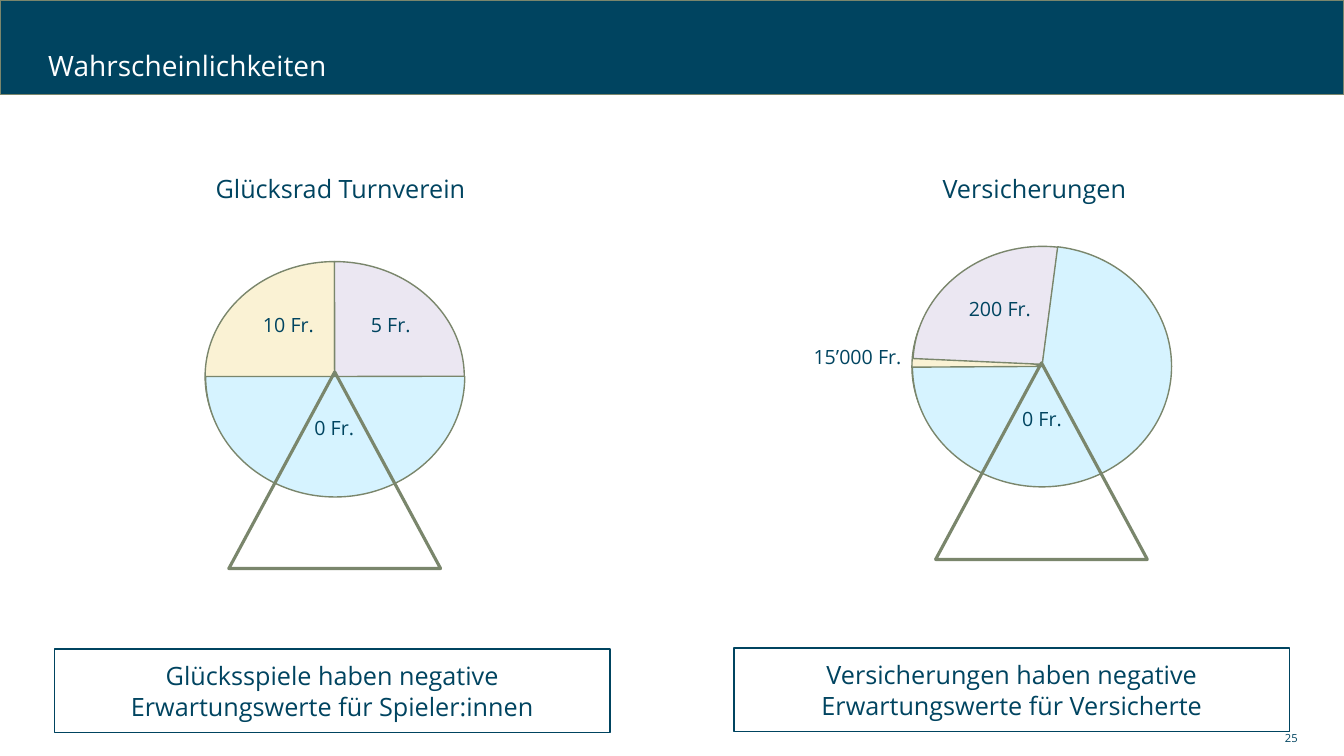
from pptx import Presentation
from pptx.dml.color import RGBColor
from pptx.enum.shapes import MSO_SHAPE as SHAPE
from pptx.enum.text import MSO_ANCHOR as ANCHOR, MSO_AUTO_SIZE as AUTO_SIZE, PP_ALIGN as ALIGN
from pptx.oxml.ns import qn
from pptx.util import Inches, Pt

NAVY = RGBColor(0x00, 0x44, 0x60)
OLIVE = RGBColor(0x7A, 0x86, 0x6C)
CREAM = RGBColor(0xFA, 0xF2, 0xD4)
LILAC = RGBColor(0xEB, 0xE7, 0xF2)
SKY = RGBColor(0xD6, 0xF3, 0xFF)
WHITE = RGBColor(0xFF, 0xFF, 0xFF)
FONT = "Open Sans"


def write_text(shape, text, size=14, color=NAVY, align=ALIGN.LEFT,
               anchor=ANCHOR.TOP, wrap=True, spacing=None):
    frame = shape.text_frame
    frame.word_wrap = wrap
    frame.auto_size = AUTO_SIZE.NONE if wrap else AUTO_SIZE.SHAPE_TO_FIT_TEXT
    frame.vertical_anchor = anchor
    paragraph = frame.paragraphs[0]
    paragraph.text = text
    paragraph.alignment = align
    paragraph.line_spacing = spacing
    paragraph.font.name = FONT
    paragraph.font.size = Pt(size)
    paragraph.font.color.rgb = color


class WheelSlide:
    def __init__(self, presentation):
        self.slide = presentation.slides.add_slide(presentation.slide_layouts[6])

    def shape(self, kind, box, fill=None, line=OLIVE, width=1):
        shape = self.slide.shapes.add_shape(kind, *map(Inches, box))
        shape.shadow.inherit = False
        if fill is None:
            shape.fill.background()
        else:
            shape.fill.solid()
            shape.fill.fore_color.rgb = fill
        shape.line.color.rgb = line
        shape.line.width = Pt(width)
        return shape

    def text(self, text, box, **style):
        write_text(self.slide.shapes.add_textbox(*map(Inches, box)), text, **style)

    def label(self, text, left, top, width, height=0.34, size=14):
        self.text(text, (left, top, width, height), size=size, wrap=False)

    def statement(self, text, left, top):
        box = self.shape(SHAPE.RECTANGLE, (left, top, 5.51, 0.83), line=NAVY)
        write_text(box, text, size=18, align=ALIGN.CENTER, anchor=ANCHOR.MIDDLE)

    def sector(self, box, fill, start, end, rotation=0):
        """Mirrored pie sector; angles in degrees, clockwise from the right."""
        pie = self.shape(SHAPE.PIE, box, fill)
        for index, angle in enumerate((start, end)):
            pie.adjustments[index] = angle * 0.6  # 60000 units a degree, scaled by 100000
        pie.rotation = rotation
        pie.element.spPr.find(qn("a:xfrm")).set("flipH", "1")

    def wheel(self, sectors, labels, stand_left, stand_top):
        for sector in sectors:
            self.sector(*sector)
        self.shape(SHAPE.ISOSCELES_TRIANGLE, (stand_left, stand_top, 2.1, 1.95), width=2.25)
        for label in labels:
            self.label(*label)


def main():
    presentation = Presentation()
    presentation.slide_width = Inches(13.33)
    presentation.slide_height = Inches(7.5)
    page = WheelSlide(presentation)

    # Title bar
    page.shape(SHAPE.RECTANGLE, (0, 0, 13.33, 0.94), NAVY)
    page.text("Wahrscheinlichkeiten", (0.38, 0.4, 11.8, 0.54), size=20,
              color=WHITE, anchor=ANCHOR.MIDDLE, spacing=0.9)

    # Wheel of fortune
    page.label("Glücksrad Turnverein", 2.04, 1.67, 2.7, 0.4, 18)
    page.wheel(
        [((2.18, 2.45, 2.28, 2.57), CREAM, 0, 180.12, 90),
         ((2.18, 2.45, 2.28, 2.57), LILAC, 0, 180.12, 270),
         ((2.04, 2.54, 2.57, 2.39), SKY, 0, 180.12)],
        [("0 Fr.", 3.02, 4.08, 0.6),
         ("5 Fr.", 3.58, 3.06, 0.6),
         ("10 Fr.", 2.51, 3.06, 0.71)],
        2.27, 3.69)
    page.statement("Glücksspiele haben negative Erwartungswerte für Spieler:innen", 0.54, 6.44)

    # Insurance wheel
    page.label("Versicherungen", 9.25, 1.67, 2.04, 0.4, 18)
    page.wheel(
        [((9.19, 2.35, 2.28, 2.57), CREAM, 72.52, 180.12, 90),
         ((9.17, 2.33, 2.34, 2.57), LILAC, 172.36, 267.44, 270),
         ((9.05, 2.44, 2.57, 2.39), SKY, 0.34, 262.53)],
        [("0 Fr.", 10.04, 3.99, 0.6),
         ("200 Fr.", 9.51, 2.9, 0.82),
         ("15’000 Fr.", 7.97, 3.37, 1.08)],
        9.28, 3.6)
    page.statement("Versicherungen haben negative Erwartungswerte für Versicherte", 7.28, 6.43)

    # Page number
    page.text("25", (9.43, 7.2, 3.54, 0.24), size=8, align=ALIGN.RIGHT, anchor=ANCHOR.MIDDLE)

    presentation.save("out.pptx")


if __name__ == "__main__":
    main()
